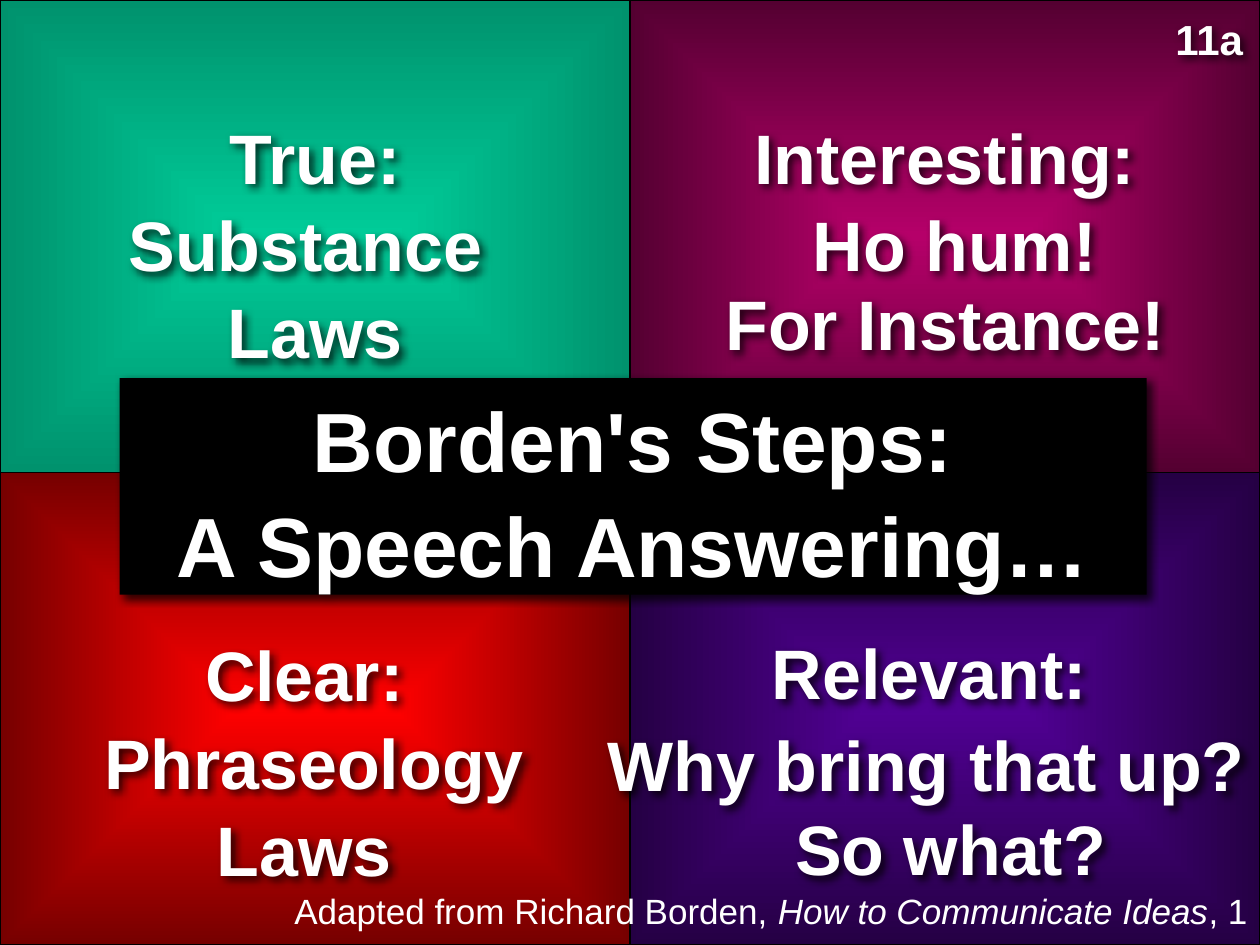
import pptx
import pptx.util
import pptx.dml.color
import pptx.enum.shapes
import pptx.enum.text
import pptx.oxml
import pptx.oxml.ns

WIDTH, HEIGHT = 10, 7.5
WHITE, BLACK = "FFFFFF", "000000"
ALIGN = pptx.enum.text.PP_ALIGN

# Content: quadrant (column, row, centre colour, edge colour)
QUADRANTS = [
    (0, 0, "00CC99", "00926D"),
    (1, 0, "B50069", "540031"),
    (1, 1, "500093", "250044"),
    (0, 1, "FF0000", "760000"),
]
# Text and box (left, top, width, height); a vertical tab breaks the line
STEPS = [
    ("True:\vSubstance \vLaws", (0, 0.83, 5, 2.12)),
    ("Clear:\v Phraseology Laws", (-0.17, 4.94, 5.17, 2.12)),
    ("Interesting:\v Ho hum!", (5, 0.83, 5, 1.43)),
    ("For Instance!", (5, 2.15, 5, 0.77)),
    ("Relevant:", (4.75, 4.92, 5.25, 0.77)),
    ("Why bring that up? ", (4.69, 5.65, 5.48, 0.77)),
    ("So what?", (4.92, 6.32, 5.25, 0.77)),
]
TITLE = "Borden's Steps:\vA Speech Answering…"
TITLE_BOX = (0.95, 3, 8.15, 1.72)
NUMBER, NUMBER_BOX = "11a", (9.23, 0.04, 0.77, 0.5)
SOURCE = [("Adapted from Richard Borden, ", False),
          ("How to Communicate Ideas", True), (", 1", False)]
SOURCE_BOX = (0.83, 7, 9.17, 0.44)


def colour(value):
    return pptx.dml.color.RGBColor.from_string(value)


def inches(box):
    return [pptx.util.Inches(length) for length in box]


def add_xml(parent, body):
    parent.append(pptx.oxml.parse_xml(
        body.replace(">", " " + pptx.oxml.ns.nsdecls("a") + ">", 1)))


def add_shadow(shape):
    add_xml(shape.element.spPr, (
        '<a:effectLst><a:outerShdw blurRad="63500" dist="38100" dir="2700000" '
        'algn="ctr" rotWithShape="0"><a:srgbClr val="000000"><a:alpha val="75000"/>'
        '</a:srgbClr></a:outerShdw></a:effectLst>'))


def write(shape, spans, size=40, bold=True, align=ALIGN.CENTER, wrap=True, shadow=True):
    """Fill a shape with one paragraph made of (text, italic) spans."""
    frame = shape.text_frame
    frame.word_wrap = wrap
    frame.auto_size = pptx.enum.text.MSO_AUTO_SIZE.NONE
    frame.vertical_anchor = pptx.enum.text.MSO_ANCHOR.TOP
    para = frame.paragraphs[0]
    para.alignment = align
    para.line_spacing = 1.04
    para.space_before = pptx.util.Pt(0)
    for text, italic in spans:
        for index, line in enumerate(text.split("\v")):
            if index:
                para.add_line_break()
            span = para.add_run()
            span.text = line
            font = span.font
            font.name, font.size = "Arial", pptx.util.Pt(size)
            font.bold, font.italic = bold, italic
            font.color.rgb = colour(WHITE)
    if shadow:
        add_shadow(shape)


deck = pptx.Presentation()
deck.slide_width, deck.slide_height = inches((WIDTH, HEIGHT))
page = deck.slides.add_slide(deck.slide_layouts[5])
page.background.fill.solid()
page.background.fill.fore_color.rgb = colour(BLACK)

# Coloured quadrants
for column, row, centre, edge in QUADRANTS:
    box = (column * WIDTH / 2, row * HEIGHT / 2, WIDTH / 2, HEIGHT / 2)
    quadrant = page.shapes.add_shape(
        pptx.enum.shapes.MSO_SHAPE.RECTANGLE, *inches(box))
    add_xml(quadrant.element.spPr, (
        f'<a:gradFill rotWithShape="0"><a:gsLst><a:gs pos="0"><a:srgbClr val="{centre}"/>'
        f'</a:gs><a:gs pos="100000"><a:srgbClr val="{edge}"/></a:gs></a:gsLst>'
        '<a:path path="rect"><a:fillToRect l="50000" t="50000" r="50000" b="50000"/>'
        '</a:path></a:gradFill>'))
    quadrant.line.color.rgb = colour(BLACK)
    quadrant.line.width = pptx.util.Pt(1)
    quadrant.shadow.inherit = False

# Steps
for text, box in STEPS:
    write(page.shapes.add_textbox(*inches(box)), [(text, False)])

# Title band, in front of the quadrants
title = page.shapes.title
title.left, title.top, title.width, title.height = inches(TITLE_BOX)
title.fill.solid()
title.fill.fore_color.rgb = colour(BLACK)
write(title, [(TITLE, False)], size=48)
page.shapes.element.append(title.element)

# Page number and source
write(page.shapes.add_textbox(*inches(NUMBER_BOX)), [(NUMBER, False)],
      size=24, align=ALIGN.LEFT, wrap=False)
write(page.shapes.add_textbox(*inches(SOURCE_BOX)), SOURCE,
      size=20, bold=False, align=ALIGN.RIGHT, shadow=False)

deck.save("out.pptx")
